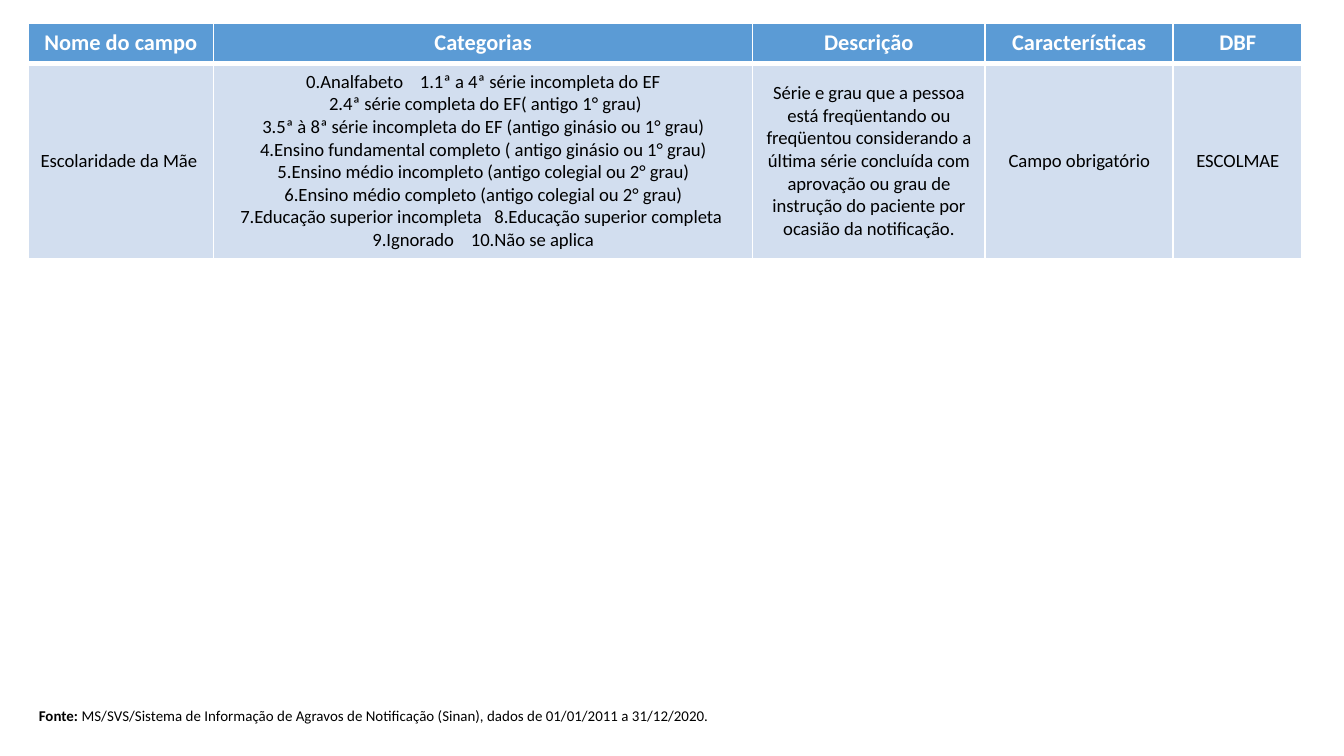
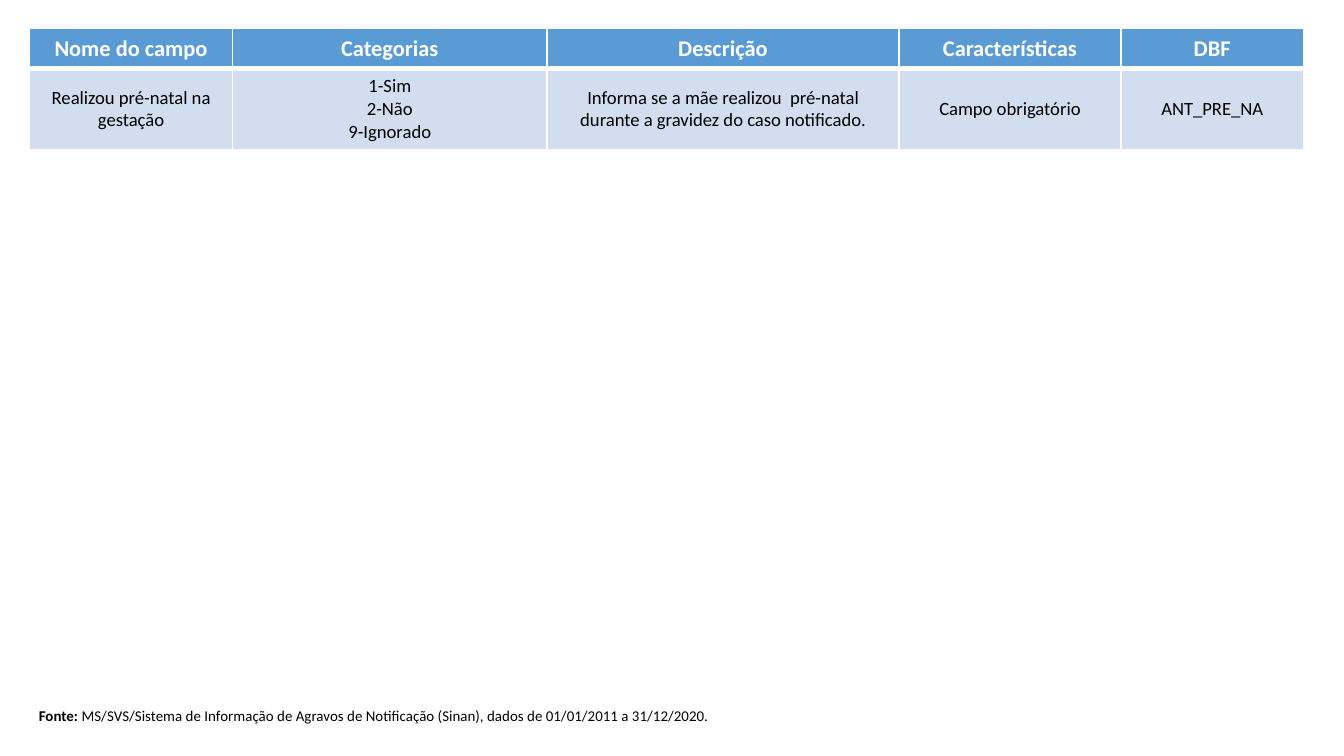
from lxml import etree
from pptx import Presentation
from pptx.dml.color import RGBColor
from pptx.enum.text import MSO_ANCHOR, MSO_AUTO_SIZE, PP_ALIGN
from pptx.oxml.ns import qn
from pptx.util import Inches, Pt

# Shared look
FONT = "Calibri"
WHITE, BLACK, HEADER_BLUE, ROW_BLUE = "FFFFFF", "000000", "5B9BD5", "D2DEEF"
HEADERS = ["Nome do campo", "Categorias", "Descrição", "Características", "DBF"]
ROW_HEIGHTS = [0.29, 0.53]  # minimum heights, rows grow with their text
SPACE_WIDTH = 2.26  # points, at 10 pt
SOURCE = ("Fonte: ", "MS/SVS/Sistema de Informação de Agravos de Notificação "
          "(Sinan), dados de 01/01/2011 a 31/12/2020.")

# Fields: a tuple is one line of items set apart by a gap of so many spaces
SCHOOLING = [
    ["Escolaridade da Mãe "],
    [("0.Analfabeto", 4, "1.1ª a 4ª série incompleta do EF"),
     " 2.4ª série completa do EF( antigo 1° grau)",
     "3.5ª à 8ª série incompleta do EF (antigo ginásio ou 1° grau)",
     "4.Ensino fundamental completo ( antigo ginásio ou 1° grau)",
     "5.Ensino médio incompleto (antigo colegial ou 2° grau)",
     "6.Ensino médio completo (antigo colegial ou 2° grau)",
     ("7.Educação superior incompleta", 3, "8.Educação superior completa "),
     ("9.Ignorado", 4, "10.Não se aplica")],
    ["Série e grau que a pessoa está freqüentando ou freqüentou considerando a "
     "última série concluída com aprovação ou grau de instrução do paciente por "
     "ocasião da notificação."],
    ["Campo obrigatório"],
    ["ESCOLMAE"],
]
PRENATAL = [
    ["Realizou pré-natal na gestação"],
    ["1-Sim", "2-Não", "9-Ignorado"],
    ["Informa se a mãe realizou  pré-natal durante a gravidez do caso notificado."],
    ["Campo obrigatório"],
    ["ANT_PRE_NA"],
]


def rgb(color):
    return RGBColor.from_string(color)


def style_run(r, size, color, bold=False):
    r.font.name, r.font.size, r.font.bold = FONT, Pt(size), bold
    r.font.color.rgb = rgb(color)


def write_line(p, line):
    """Write a line; a gap is one space with widened character spacing."""
    if isinstance(line, str):
        p.text = line
        return
    left, spaces, right = line
    for text in (left, " ", right):
        r = p.add_run()
        r.text = text
        if text == " ":
            extra = round((spaces - 1) * SPACE_WIDTH * 100)
            r.font._element.set("spc", str(extra))


def set_borders(cell, top, bottom):
    tc_pr = cell._tc.get_or_add_tcPr()
    for side, width in (("L", 1), ("R", 1), ("T", top), ("B", bottom)):
        ln = etree.SubElement(tc_pr, qn(f"a:ln{side}"), w=str(Pt(width)))
        fill = etree.SubElement(ln, qn("a:solidFill"))
        etree.SubElement(fill, qn("a:srgbClr"), val=WHITE)


def fill_cell(cell, lines, size, color, fill, bold=False, top=1, bottom=1):
    set_borders(cell, top, bottom)
    cell.fill.solid()
    cell.fill.fore_color.rgb = rgb(fill)
    cell.vertical_anchor = MSO_ANCHOR.MIDDLE
    cell.margin_left = cell.margin_right = Inches(0.09)
    cell.margin_top = cell.margin_bottom = Inches(0.05)
    tf = cell.text_frame
    for i, line in enumerate(lines):
        p = tf.paragraphs[0] if i == 0 else tf.add_paragraph()
        write_line(p, line)
        p.alignment = PP_ALIGN.CENTER
        for r in p.runs:
            style_run(r, size, color, bold)


def add_field_table(s, left, top, height, widths, field):
    frame = s.shapes.add_table(len(ROW_HEIGHTS), len(widths), Inches(left),
                               Inches(top), Inches(sum(widths)), Inches(height))
    table = frame.table
    table.horz_banding = False
    for row, row_height in zip(table.rows, ROW_HEIGHTS):
        row.height = Inches(row_height)
    for col, (width, header, lines) in enumerate(zip(widths, HEADERS, field)):
        table.columns[col].width = Inches(width)
        fill_cell(table.cell(0, col), [header], 12, WHITE, HEADER_BLUE,
                  bold=True, bottom=3)
        fill_cell(table.cell(1, col), lines, 10, BLACK, ROW_BLUE, top=3)
    frame.height = Inches(height)


def add_source(s):
    box = s.shapes.add_textbox(Inches(0.19), Inches(5.21), Inches(5.38), Inches(0.24))
    tf = box.text_frame
    tf.word_wrap = True
    tf.auto_size = MSO_AUTO_SIZE.SHAPE_TO_FIT_TEXT
    for i, text in enumerate(SOURCE):
        r = tf.paragraphs[0].add_run()
        r.text = text
        style_run(r, 8, BLACK, bold=i == 0)


def main():
    prs = Presentation()
    # Widescreen, 16:9
    prs.slide_width, prs.slide_height = Inches(10), Inches(10 * 9 / 16)
    # One slide per field: left, top, height, column widths, content
    fields = [
        (0.21, 0.17, 1.73, [1.38, 4.01, 1.73, 1.4, 0.96], SCHOOLING),
        (0.22, 0.21, 0.9, [1.51, 2.34, 2.62, 1.65, 1.36], PRENATAL),
    ]
    for field in fields:
        s = prs.slides.add_slide(prs.slide_layouts[6])
        add_field_table(s, *field)
        add_source(s)
    prs.save("out.pptx")


if __name__ == "__main__":
    main()
